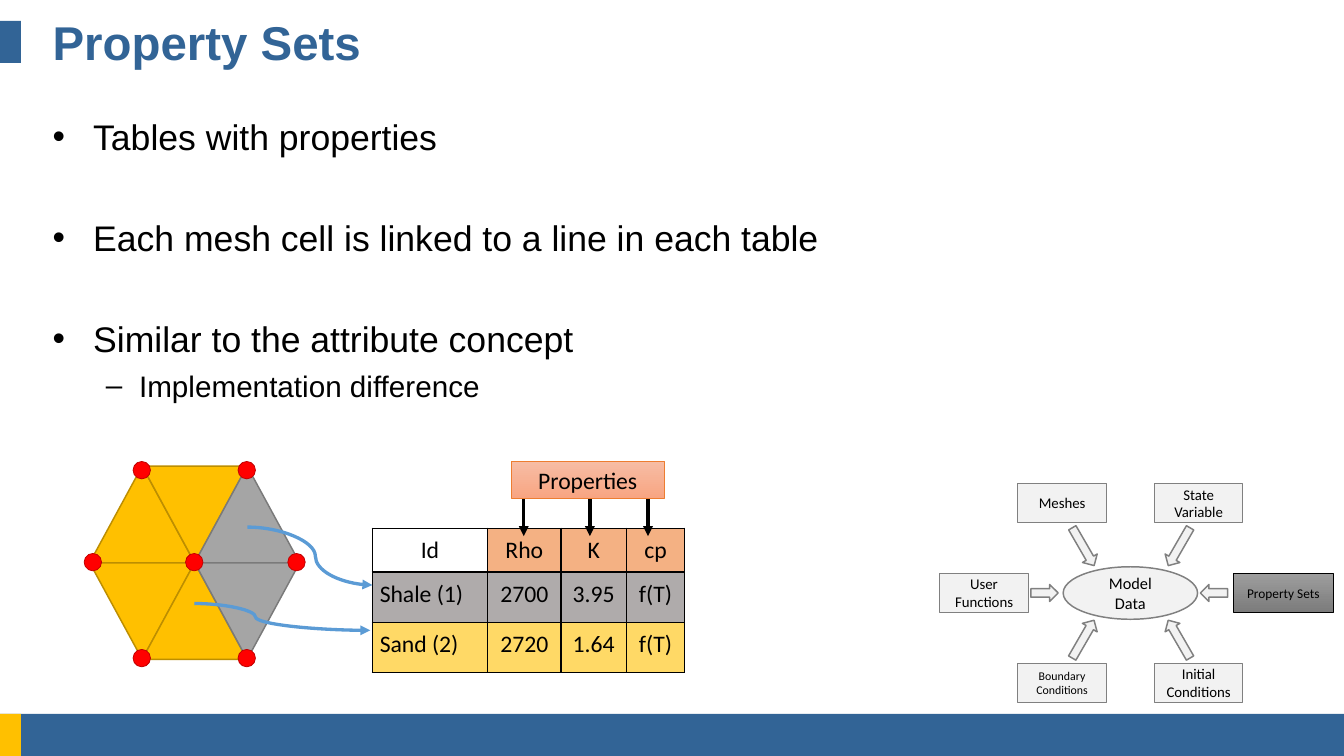
from lxml import etree
from pptx import Presentation
from pptx import util as u
from pptx.dml.color import RGBColor
from pptx.enum import shapes, text
from pptx.oxml.ns import qn

BLUE = RGBColor(0x32, 0x64, 0x96)
GOLD = RGBColor(0xFF, 0xC0, 0x00)
GOLD_EDGE = RGBColor(0xBD, 0x8E, 0x00)
GREY = RGBColor(0xA5, 0xA5, 0xA5)
GREY_EDGE = RGBColor(0x7A, 0x7A, 0x7A)
RED = RGBColor(0xFF, 0x00, 0x00)
RED_EDGE = RGBColor(0xC0, 0x00, 0x00)
BLACK = RGBColor(0x00, 0x00, 0x00)
WHITE = RGBColor(0xFF, 0xFF, 0xFF)
PEACH = RGBColor(0xF4, 0xB1, 0x83)
SHALE = RGBColor(0xAF, 0xAB, 0xAB)
SAND = RGBColor(0xFF, 0xD9, 0x66)
ORANGE = RGBColor(0xED, 0x7D, 0x31)
SKY = RGBColor(0x5B, 0x9B, 0xD5)
PALE = RGBColor(0xF2, 0xF2, 0xF2)
MID = RGBColor(0x80, 0x80, 0x80)
SALMON_FADE = [RGBColor(0xF7, 0xBD, 0xA5), RGBColor(0xF8, 0xA5, 0x82)]
GREY_FADE = [RGBColor(0x9D, 0x9D, 0x9D), RGBColor(0x7C, 0x7C, 0x7C)]

deck = Presentation()
deck.slide_width = u.Inches(12.6)
deck.slide_height = u.Inches(7.09)
COL = deck.slide_width / 64
ROW = deck.slide_height / 36
page = deck.slides.add_slide(deck.slide_layouts[1])
KIND = shapes.MSO_SHAPE


def draw(kind, col, row, cols, rows, fill, edge=None, weight=1):
    shape = page.shapes.add_shape(
        kind, int(col * COL), int(row * ROW), int(cols * COL), int(rows * ROW))
    shape.shadow.inherit = False
    if isinstance(fill, list):
        shape.fill.gradient()
        shape.fill.gradient_angle = 270
        for stop, tone in zip(shape.fill.gradient_stops, fill):
            stop.color.rgb = tone
    else:
        shape.fill.solid()
        shape.fill.fore_color.rgb = fill
    if edge is None:
        shape.line.fill.background()
    else:
        shape.line.color.rgb = edge
        shape.line.width = u.Pt(weight)
    return shape


def write(para, words, size, face="Calibri", colour=BLACK, bold=False,
          align=text.PP_ALIGN.CENTER):
    para.alignment = align
    span = para.add_run()
    span.text = words
    span.font.name = face
    span.font.size = u.Pt(size)
    span.font.color.rgb = colour
    span.font.bold = bold


for col, row, cols, fill in [(0, 34, 64, BLUE), (0, 34, 1, GOLD), (0, 1, 1, BLUE)]:
    draw(KIND.RECTANGLE, col, row, cols, 2, fill)

title, body = page.shapes.title, page.placeholders[1]
for box, row, rows in [(title, 1, 2), (body, 5.2, 25)]:
    box.left, box.top = int(2 * COL), int(row * ROW)
    box.width, box.height = int(60 * COL), int(rows * ROW)
    box.text_frame.auto_size = text.MSO_AUTO_SIZE.NONE
title.text_frame.vertical_anchor = text.MSO_ANCHOR.MIDDLE
write(title.text_frame.paragraphs[0], "Property Sets", 32, "Arial", BLUE, True,
      text.PP_ALIGN.LEFT)

points = [
    ("Tables with properties", 0, 24, 0),
    ("Each mesh cell is linked to a line in each table", 0, 24, 39.5),
    ("Similar to the attribute concept", 0, 24, 39.5),
    ("Implementation difference", 1, 20, 5.5),
]
for place, (words, level, size, gap) in enumerate(points):
    frame = body.text_frame
    para = frame.add_paragraph() if place else frame.paragraphs[0]
    para.level = level
    para.space_before = u.Pt(gap)
    margin, hang, mark = [(0.38, 0.38, "•"), (0.81, 0.31, "–")][level]
    layout = para._p.get_or_add_pPr()
    layout.set("marL", str(u.Inches(margin)))
    layout.set("indent", str(-u.Inches(hang)))
    etree.SubElement(layout, qn("a:buChar")).set("char", mark)
    write(para, words, size, "Arial", align=text.PP_ALIGN.LEFT)

records = [
    (1.78, ["Id", "Rho", "K", "cp"], [WHITE, PEACH, PEACH, PEACH]),
    (2.39, ["Shale (1)", "2700", "3.95", "f(T)"], [SHALE] * 4),
    (2.39, ["Sand (2)", "2720", "1.64", "f(T)"], [SAND] * 4),
]
widths = [5.49, 3.5, 3.1, 2.79]
table = page.shapes.add_table(3, 4, int(17.73 * COL), int(25.15 * ROW),
                              int(sum(widths) * COL), int(6.56 * ROW)).table
table.first_row = table.horz_banding = False
for column, width in zip(table.columns, widths):
    column.width = int(width * COL)
for r, (height, values, fills) in enumerate(records):
    table.rows[r].height = int(height * ROW)
    for c, (value, fill) in enumerate(zip(values, fills)):
        cell = table.cell(r, c)
        cell.margin_left = cell.margin_right = u.Inches(0.07)
        cell.margin_top = cell.margin_bottom = u.Inches(0.07)
        for side in ("a:lnL", "a:lnR", "a:lnT", "a:lnB"):
            border = etree.SubElement(cell._tc.get_or_add_tcPr(), qn(side))
            border.set("w", str(u.Pt(1)))
            paint = etree.SubElement(border, qn("a:solidFill"))
            etree.SubElement(paint, qn("a:srgbClr")).set("val", str(BLACK))
        cell.fill.solid()
        cell.fill.fore_color.rgb = fill
        left = r > 0 and c == 0
        write(cell.text_frame.paragraphs[0], value, 16,
              align=text.PP_ALIGN.LEFT if left else text.PP_ALIGN.CENTER)

for r in range(2):
    for c in range(3):
        fill, edge = (GREY, GREY_EDGE) if c == 2 else (GOLD, GOLD_EDGE)
        triangle = draw(KIND.ISOSCELES_TRIANGLE, 4.27 + 2.5 * c, 22.2 + 4.6 * r,
                        5, 4.6, fill, edge)
        triangle.rotation = 180 * ((r + c) % 2)

NODE = 0.83
for dx, dy in [(0, 0), (4.87, 0), (-4.83, 0), (-2.5, -4.38), (2.5, -4.38),
               (-2.5, 4.57), (2.5, 4.57)]:
    draw(KIND.OVAL, 9.25 + dx - NODE / 2, 26.77 + dy - NODE / 2, NODE, NODE,
         RED, RED_EDGE, 0.5)

straight, curve = shapes.MSO_CONNECTOR.STRAIGHT, shapes.MSO_CONNECTOR.CURVE
links = [(straight, col, 23.72, col, 25.53, BLACK, None) for col in (24.94, 28.09, 30.86)]
links += [(curve, 11.78, 25.1, 17.73, 27.86, SKY, 54400),
          (curve, 9.25, 28.74, 17.63, 30.02, SKY, 34800)]
for kind, col, row, end_col, end_row, colour, bend in links:
    link = page.shapes.add_connector(kind, int(col * COL), int(row * ROW),
                                     int(end_col * COL), int(end_row * ROW))
    link.line.color.rgb = colour
    link.line.width = u.Pt(2.25)
    props = link.element.spPr
    etree.SubElement(props.find(qn("a:ln")), qn("a:tailEnd")).set("type", "triangle")
    etree.SubElement(props, qn("a:effectLst"))
    if bend:
        guide = etree.SubElement(props.find(qn("a:prstGeom")).find(qn("a:avLst")), qn("a:gd"))
        guide.set("name", "adj1")
        guide.set("fmla", f"val {bend}")

header = draw(KIND.RECTANGLE, 24.33, 21.95, 7.32, 1.78, SALMON_FADE, ORANGE, 0.5)
frame = header.text_frame
frame.margin_left = frame.margin_right = u.Inches(0.04)
frame.margin_top = frame.margin_bottom = u.Inches(0.04)
write(frame.paragraphs[0], "Properties", 16)

HUB_COL, HUB_ROW = 53.83, 28.24
hub = draw(KIND.OVAL, HUB_COL - 3.2, HUB_ROW - 1.25, 6.4, 2.5, PALE, MID)
write(hub.text_frame.paragraphs[0], "Model Data", 11)

parts = [
    ("User Functions", 10, -6.97, 0, 4.22, -4.09, 0, 1.3, 0),
    ("Boundary Conditions", 8, -3.25, 4.28, 4.22, -2.25, 2.2, 2.08, 300),
    ("Property Sets", 9, 7.28, 0, 4.78, 3.98, 0, 1.3, 180),
    ("State Variable", 10, 3.25, -4.28, 4.22, 2.32, -2.2, 2.08, 120),
    ("Meshes", 10, -3.25, -4.28, 4.22, -2.25, -2.2, 2.08, 60),
    ("Initial Conditions", 10, 3.25, 4.28, 4.22, 2.32, 2.2, 2.08, 240),
]
for name, size, dx, dy, width, arrow_dx, arrow_dy, length, angle in parts:
    active = name == "Property Sets"
    box = draw(KIND.RECTANGLE, HUB_COL + dx - width / 2, HUB_ROW + dy - 0.92, width, 1.83,
               GREY_FADE if active else PALE, BLACK if active else MID, 0.5)
    box.text_frame.vertical_anchor = text.MSO_ANCHOR.MIDDLE
    write(box.text_frame.paragraphs[0], name, size)
    arrow = draw(KIND.RIGHT_ARROW, HUB_COL + arrow_dx - length / 2,
                 HUB_ROW + arrow_dy - 0.41, length, 0.81, PALE, MID)
    arrow.rotation = angle

deck.save("out.pptx")
